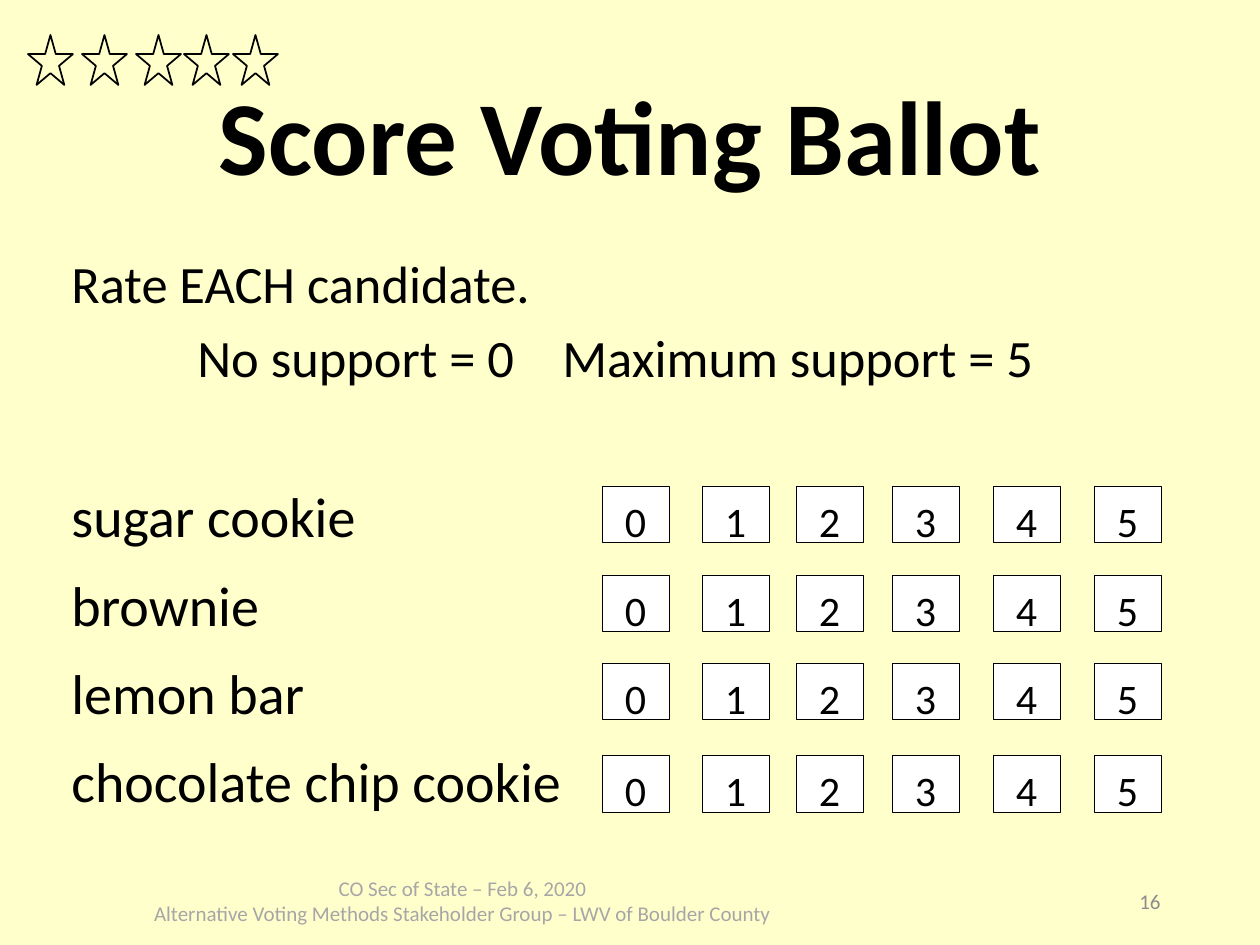
import pptx
import pptx.util
import pptx.dml.color
import pptx.enum.shapes
import pptx.enum.text
import pptx.oxml.ns
import lxml.etree

PX = 914400 / 126
HUES = {"page": "FFFFCC", "ink": "000000", "box": "FFFFFF",
        "foot": "A6A6A6", "num": "8C8C8C"}
FONT = "Calibri"
KIND = pptx.enum.shapes.MSO_SHAPE
ALIGN = pptx.enum.text.PP_ALIGN
ANCHOR = pptx.enum.text.MSO_ANCHOR

STARS = [28, 82, 136, 184, 233]
COLS = [602, 702, 796, 892, 993, 1094]
ROWS = [486, 575, 663, 755]
TREATS = ["sugar cookie", "brownie", "lemon bar", "chocolate chip cookie"]


def px(*sizes):
    return [pptx.util.Emu(round(size * PX)) for size in sizes]


def tint(name):
    return pptx.dml.color.RGBColor.from_string(HUES[name])


def write(frame, text, size=24, hue="ink", bold=False, align=ALIGN.LEFT,
          line=None, before=0, after=0, tabs=()):
    """Add one paragraph, using the first one while it is still empty."""
    para = frame.paragraphs[0] if not frame.text else frame.add_paragraph()
    para.alignment = align
    para.line_spacing = line
    para.space_before = pptx.util.Pt(before)
    para.space_after = pptx.util.Pt(after)
    run = para.add_run()
    run.text = text
    run.font.name = FONT
    run.font.size = pptx.util.Pt(size)
    run.font.bold = bold
    run.font.color.rgb = tint(hue)
    if tabs:
        name = pptx.oxml.ns.qn
        stops = lxml.etree.SubElement(para._p.get_or_add_pPr(), name("a:tabLst"))
        for stop in px(*tabs):
            lxml.etree.SubElement(stops, name("a:tab"), pos=str(stop), algn="l")


def area(slide, left, top, width, height, anchor=ANCHOR.TOP):
    frame = slide.shapes.add_textbox(*px(left, top, width, height)).text_frame
    frame.word_wrap = True
    frame.vertical_anchor = anchor
    return frame


def shape(group, kind, left, top, width, height, weight, fill=None):
    item = group.shapes.add_shape(kind, *px(left, top, width, height))
    item.shadow.inherit = False
    if fill:
        item.fill.solid()
        item.fill.fore_color.rgb = tint(fill)
    else:
        item.fill.background()
    item.line.color.rgb = tint("ink")
    item.line.width = pptx.util.Pt(weight)
    return item


def rate(slide, top):
    """One row of score boxes, 0 to 5."""
    group = slide.shapes.add_group_shape()
    for score, left in enumerate(COLS):
        frame = shape(group, KIND.RECTANGLE, left, top, 67, 57, 0.5, "box").text_frame
        frame.vertical_anchor = ANCHOR.TOP
        write(frame, str(score), align=ALIGN.CENTER, line=1.07, after=8)


def main():
    deck = pptx.Presentation()
    deck.slide_width, deck.slide_height = px(1260, 945)
    slide = deck.slides.add_slide(deck.slide_layouts[6])
    slide.background.fill.solid()
    slide.background.fill.fore_color.rgb = tint("page")

    # Footer
    foot = area(slide, 120, 869, 685, 50)
    for text in ("CO Sec of State – Feb 6, 2020",
                 "Alternative Voting Methods Stakeholder Group – LWV of Boulder County"):
        write(foot, text, size=12, hue="foot", align=ALIGN.CENTER)

    # Title
    title = area(slide, 87, 50, 1086, 183, ANCHOR.MIDDLE)
    write(title, "Score Voting Ballot", size=60, bold=True,
          align=ALIGN.CENTER, line=0.9)

    # Instructions and candidates
    body = area(slide, 59, 252, 1114, 600)
    write(body, "Rate EACH candidate.", size=30, line=0.9, before=10)
    write(body, "\tNo support = 0\tMaximum support = 5", size=30, line=0.9,
          before=10, tabs=(126, 491))
    for treat in TREATS:
        write(body, treat, size=32, before=53 if treat == TREATS[0] else 12)

    # Stars
    group = slide.shapes.add_group_shape()
    for left in STARS:
        shape(group, KIND.STAR_5_POINT, left, 35, 45, 50, 1)

    # Score boxes
    for top in ROWS:
        rate(slide, top)

    # Page number
    write(area(slide, 890, 876, 283, 50, ANCHOR.MIDDLE), "16", size=12,
          hue="num", align=ALIGN.RIGHT)

    deck.save("out.pptx")


if __name__ == "__main__":
    main()
